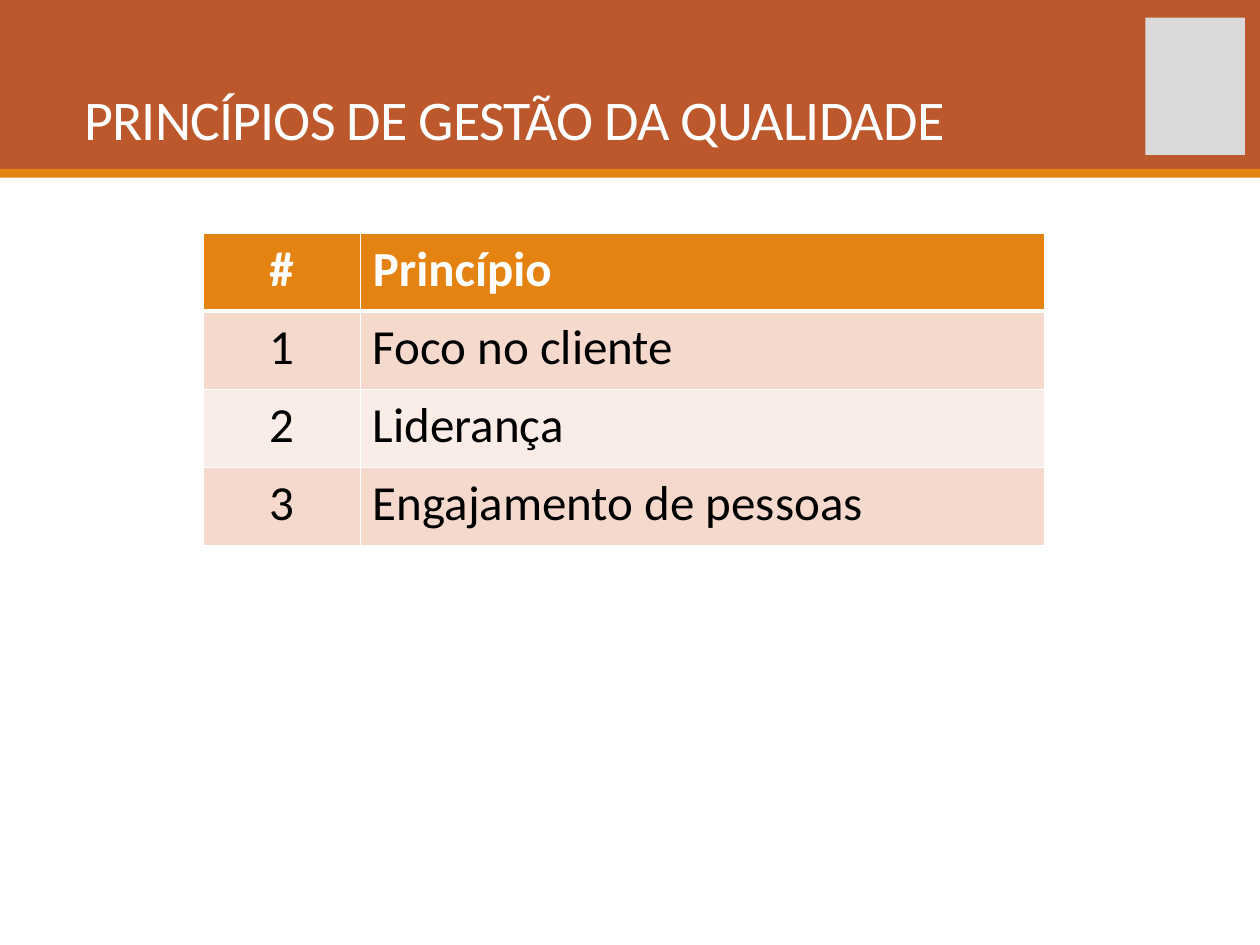
from dataclasses import dataclass

from lxml.etree import SubElement
from pptx import Presentation
from pptx.dml.color import RGBColor as Color
from pptx.enum.shapes import MSO_SHAPE as Shape
from pptx.enum.text import MSO_ANCHOR as Anchor, PP_ALIGN as Align
from pptx.oxml.ns import qn
from pptx.util import Inches, Pt


@dataclass(frozen=True)
class Theme:
    font: str = "Calibri"
    title_size: int = 32
    table_size: int = 28
    white: str = "FFFFFF"
    black: str = "000000"
    banner: str = "BD582C"
    accent: str = "E48312"
    emblem: str = "D9D9D9"
    bands: tuple = ("F5D9CC", "FAEDE7")


class SlideBuilder:
    def __init__(self, slide, theme):
        self.slide = slide
        self.theme = theme

    def style(self, para, size, color, bold=False):
        para.font.name = self.theme.font
        para.font.size = Pt(size)
        para.font.bold = bold
        para.font.color.rgb = Color.from_string(color)

    def rectangle(self, left, top, width, height, color):
        box = self.slide.shapes.add_shape(
            Shape.RECTANGLE, Inches(left), Inches(top), Inches(width), Inches(height))
        box.shadow.inherit = False
        box.fill.solid()
        box.fill.fore_color.rgb = Color.from_string(color)
        box.line.fill.background()

    def title(self, text, left, top, width, height):
        box = self.slide.shapes.add_textbox(
            Inches(left), Inches(top), Inches(width), Inches(height))
        frame = box.text_frame
        frame.word_wrap = True
        frame.vertical_anchor = Anchor.BOTTOM
        frame.margin_top = frame.margin_bottom = 0
        para = frame.paragraphs[0]
        para.line_spacing = 0.85
        span = para.add_run()
        span.text = text
        self.style(para, self.theme.title_size, self.theme.white)
        span.font._element.set("spc", "-50")

    def borders(self, cell, top, bottom):
        properties = cell._tc.get_or_add_tcPr()
        widths = {"a:lnL": 1, "a:lnR": 1, "a:lnT": top, "a:lnB": bottom}
        for index, (side, width) in enumerate(widths.items()):
            line = SubElement(properties, qn(side), w=str(Pt(width)))
            fill = SubElement(line, qn("a:solidFill"))
            SubElement(fill, qn("a:srgbClr"), val=self.theme.white)
            properties.insert(index, line)

    def table(self, rows, left, top, widths, row_height):
        theme = self.theme
        table = self.slide.shapes.add_table(
            len(rows), len(widths), Inches(left), Inches(top),
            Inches(sum(widths)), Inches(row_height * len(rows))).table
        for column, width in zip(table.columns, widths):
            column.width = Inches(width)
        for row_index, values in enumerate(rows):
            table.rows[row_index].height = Inches(row_height)
            header = row_index == 0
            background = theme.accent if header else theme.bands[(row_index - 1) % 2]
            for column_index, value in enumerate(values):
                cell = table.cell(row_index, column_index)
                cell.text = value
                cell.fill.solid()
                cell.fill.fore_color.rgb = Color.from_string(background)
                para = cell.text_frame.paragraphs[0]
                para.alignment = Align.LEFT if column_index else Align.CENTER
                self.style(para, theme.table_size,
                           theme.white if header else theme.black, header)
                self.borders(cell, 3 if row_index == 1 else 1, 3 if header else 1)


def main():
    deck = Presentation()
    deck.slide_width, deck.slide_height = Inches(10), Inches(7.5)
    theme = Theme()
    page = SlideBuilder(deck.slides.add_slide(deck.slide_layouts[6]), theme)

    page.rectangle(0, 0, 10, 1.34, theme.banner)
    page.rectangle(0, 1.34, 10, 0.07, theme.accent)
    page.rectangle(9.09, 0.14, 0.79, 1.09, theme.emblem)
    principles = ["Foco no cliente", "Liderança", "Engajamento de pessoas"]
    rows = [("#", "Princípio")]
    rows += [(str(number), name) for number, name in enumerate(principles, 1)]
    page.table(rows, 1.61, 1.85, (1.25, 5.43), 0.62)
    page.title("PRINCÍPIOS DE GESTÃO DA QUALIDADE", 0.57, 0.33, 8.51, 0.88)

    deck.save("out.pptx")


if __name__ == "__main__":
    main()
